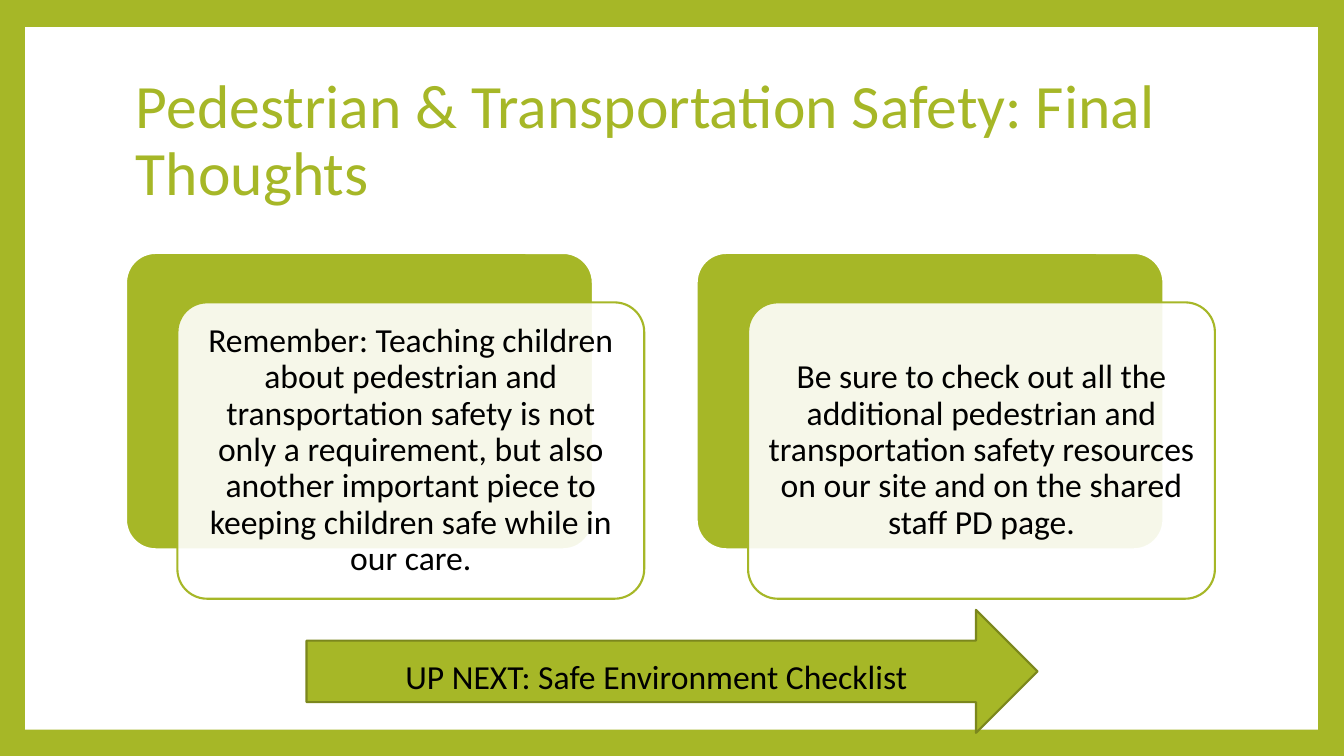
from lxml.etree import SubElement
from pptx import Presentation
from pptx.dml.color import RGBColor
from pptx.enum.shapes import MSO_SHAPE as Shape
from pptx.enum.text import MSO_ANCHOR as Anchor, PP_ALIGN as Align
from pptx.oxml.ns import qn
from pptx.util import Inches, Pt

TITLE = "Pedestrian & Transportation Safety: Final Thoughts"
CARDS = [
    "Remember: Teaching children about pedestrian and transportation safety is not only "
    "a requirement, but also another important piece to keeping children safe while in our care.",
    "Be sure to check out all the additional pedestrian and transportation safety resources "
    "on our site and on the shared staff PD page.",
]
NEXT_TOPIC = "UP NEXT: Safe Environment Checklist"
COLORS = {"green": "A6B727", "olive": "7B871D", "white": "FFFFFF", "black": "000000"}
FONT = "Calibri"
CARD_LEFT, CARD_TOP, CARD_WIDTH, CARD_HEIGHT = 1.25, 2.51, 4.63, 2.94
CARD_STEP, FRONT_RIGHT, FRONT_DOWN = 5.66, 0.51, 0.49


def color(name):
    return RGBColor.from_string(COLORS[name])


def add_block(page, kind, bounds, fill, line=None):
    block = page.shapes.add_shape(kind, *map(Inches, bounds))
    block.shadow.inherit = False
    block.fill.solid()
    block.fill.fore_color.rgb = color(fill)
    if line:
        block.line.color.rgb = color(line)
        block.line.width = Pt(1.5)
    else:
        block.line.fill.background()
    return block


def write(shape, text, size, ink, align, anchor, spacing=None):
    frame = shape.text_frame
    frame.text = text
    frame.word_wrap = True
    frame.vertical_anchor = anchor
    para = frame.paragraphs[0]
    para.alignment = align
    para.line_spacing = spacing
    span = para.runs[0]
    span.font.name = FONT
    span.font.size = Pt(size)
    span.font.color.rgb = color(ink)


def add_text(page, bounds, *style):
    box = page.shapes.add_textbox(*map(Inches, bounds))
    write(box, *style)


def add_card(page, index, text):
    left = CARD_LEFT + index * CARD_STEP
    size = (CARD_WIDTH, CARD_HEIGHT)
    back = add_block(page, Shape.ROUNDED_RECTANGLE, (left, CARD_TOP, *size), "green", "white")
    front = add_block(page, Shape.ROUNDED_RECTANGLE,
                      (left + FRONT_RIGHT, CARD_TOP + FRONT_DOWN, *size), "white", "green")
    for layer in (back, front):
        layer.adjustments[0] = 0.1
    fill_color = front.fill._xPr.find(qn("a:solidFill"))[0]
    SubElement(fill_color, qn("a:alpha"), val="90000")
    frame = front.text_frame
    frame.margin_left = frame.margin_right = Inches(0.1)
    frame.margin_top = frame.margin_bottom = Inches(0.1)
    write(front, text, 24, "black", Align.CENTER, Anchor.MIDDLE, 0.9)


def main():
    deck = Presentation()
    deck.slide_width, deck.slide_height = Inches(13.33), Inches(7.5)
    page = deck.slides.add_slide(deck.slide_layouts[6])
    page.background.fill.solid()
    page.background.fill.fore_color.rgb = color("green")

    add_block(page, Shape.RECTANGLE, (0.25, 0.27, 12.82, 6.97), "white")
    add_block(page, Shape.RIGHT_ARROW, (3.04, 6.05, 7.25, 1.22), "green", "olive")
    add_text(page, (1.25, 0.67, 10.8, 1.48), TITLE, 44, "green", Align.LEFT, Anchor.MIDDLE, 0.9)
    for index, text in enumerate(CARDS):
        add_card(page, index, text)
    add_text(page, (3.21, 6.46, 6.6, 0.5), NEXT_TOPIC, 24, "black", Align.CENTER, Anchor.TOP)
    deck.save("out.pptx")


if __name__ == "__main__":
    main()
